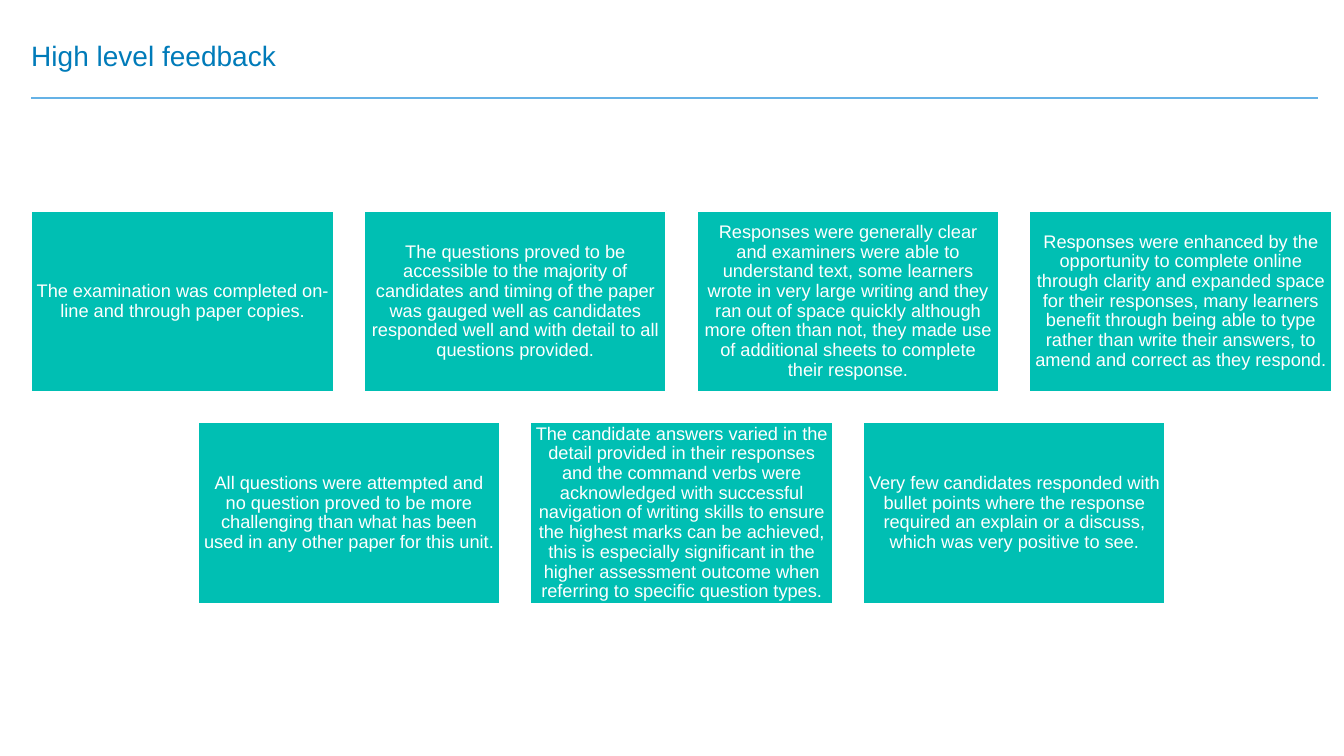
from lxml.etree import SubElement
from pptx import Presentation
from pptx.dml.color import RGBColor
from pptx.enum.shapes import MSO_CONNECTOR, MSO_SHAPE
from pptx.enum.text import MSO_ANCHOR, MSO_AUTO_SIZE, PP_ALIGN
from pptx.oxml.ns import qn
from pptx.util import Emu, Pt

ROWS = [
    [
        "The examination was completed on-line and through paper copies.",
        "The questions proved to be accessible to the majority of candidates and timing of the paper "
        "was gauged well as candidates responded well and with detail to all questions provided.",
        "Responses were generally clear and examiners were able to understand text, some learners "
        "wrote in very large writing and they ran out of space quickly although more often than not, "
        "they made use of additional sheets to complete their response.",
        "Responses were enhanced by the opportunity to complete online through clarity and expanded "
        "space for their responses, many learners benefit through being able to type rather than "
        "write their answers, to amend and correct as they respond.",
    ],
    [
        "All questions were attempted and no question proved to be more challenging than what has "
        "been used in any other paper for this unit.",
        "The candidate answers varied in the detail provided in their responses and the command verbs "
        "were acknowledged with successful navigation of writing skills to ensure the highest marks "
        "can be achieved, this is especially significant in the higher assessment outcome when "
        "referring to specific question types.",
        "Very few candidates responded with bullet points where the response required an explain or "
        "a discuss, which was very positive to see.",
    ],
]
CENTRE, TOP = 676, 209
CARD_W, CARD_H, GAP = 300, 180, 30


def px(n):
    return Emu(n * 9144)


def rgb(value):
    return RGBColor.from_string(value)


class SlideBuilder:
    """Draws styled elements on one slide."""

    font = "Arial"
    title_color = "007BB9"
    rule_color = "65B2E6"
    card_color = "00BFB3"
    white = "FFFFFF"

    def __init__(self, slide):
        self.s = slide

    def set_text(self, sp, text, size, color, align, anchor, inset):
        tf = sp.text_frame
        tf.text = text
        tf.word_wrap = True
        tf.auto_size = MSO_AUTO_SIZE.NONE
        tf.vertical_anchor = anchor
        tf.margin_left = tf.margin_right = px(inset)
        tf.margin_top = tf.margin_bottom = px(inset)
        p = tf.paragraphs[0]
        p.alignment = align
        p.line_spacing = 0.9
        p.space_before = Pt(0)
        font = p.runs[0].font
        font.name = self.font
        font.size = Pt(size)
        font.color.rgb = rgb(color)

    def title(self, text, x, y, w, h):
        sp = self.s.shapes.title
        sp.left, sp.top, sp.width, sp.height = map(px, (x, y, w, h))
        self.set_text(sp, text, 20, self.title_color, PP_ALIGN.LEFT, MSO_ANCHOR.BOTTOM, 0)

    def rule(self, x1, x2, y):
        line = self.s.shapes.add_connector(MSO_CONNECTOR.STRAIGHT, px(x1), px(y), px(x2), px(y))
        line.line.color.rgb = rgb(self.rule_color)
        line.line.width = Pt(1.75)
        SubElement(line._element.spPr, qn("a:effectLst"))

    def card(self, text, x, y, w, h):
        sp = self.s.shapes.add_shape(MSO_SHAPE.RECTANGLE, px(x), px(y), px(w), px(h))
        sp.shadow.inherit = False
        sp.fill.solid()
        sp.fill.fore_color.rgb = rgb(self.card_color)
        sp.line.color.rgb = rgb(self.white)
        sp.line.width = Pt(1.5)
        self.set_text(sp, text, 13, self.white, PP_ALIGN.CENTER, MSO_ANCHOR.MIDDLE, 5)


def main():
    prs = Presentation()
    prs.slide_width, prs.slide_height = px(1333), px(750)
    builder = SlideBuilder(prs.slides.add_slide(prs.slide_layouts[5]))
    builder.rule(31, 1307, 97)
    builder.title("High level feedback", 31, 23, 1118, 49)
    for i, row in enumerate(ROWS):
        left = CENTRE - (len(row) * (CARD_W + GAP) - GAP) // 2
        for j, text in enumerate(row):
            builder.card(text, left + j * (CARD_W + GAP), TOP + i * (CARD_H + GAP), CARD_W, CARD_H)
    prs.save("out.pptx")


if __name__ == "__main__":
    main()
